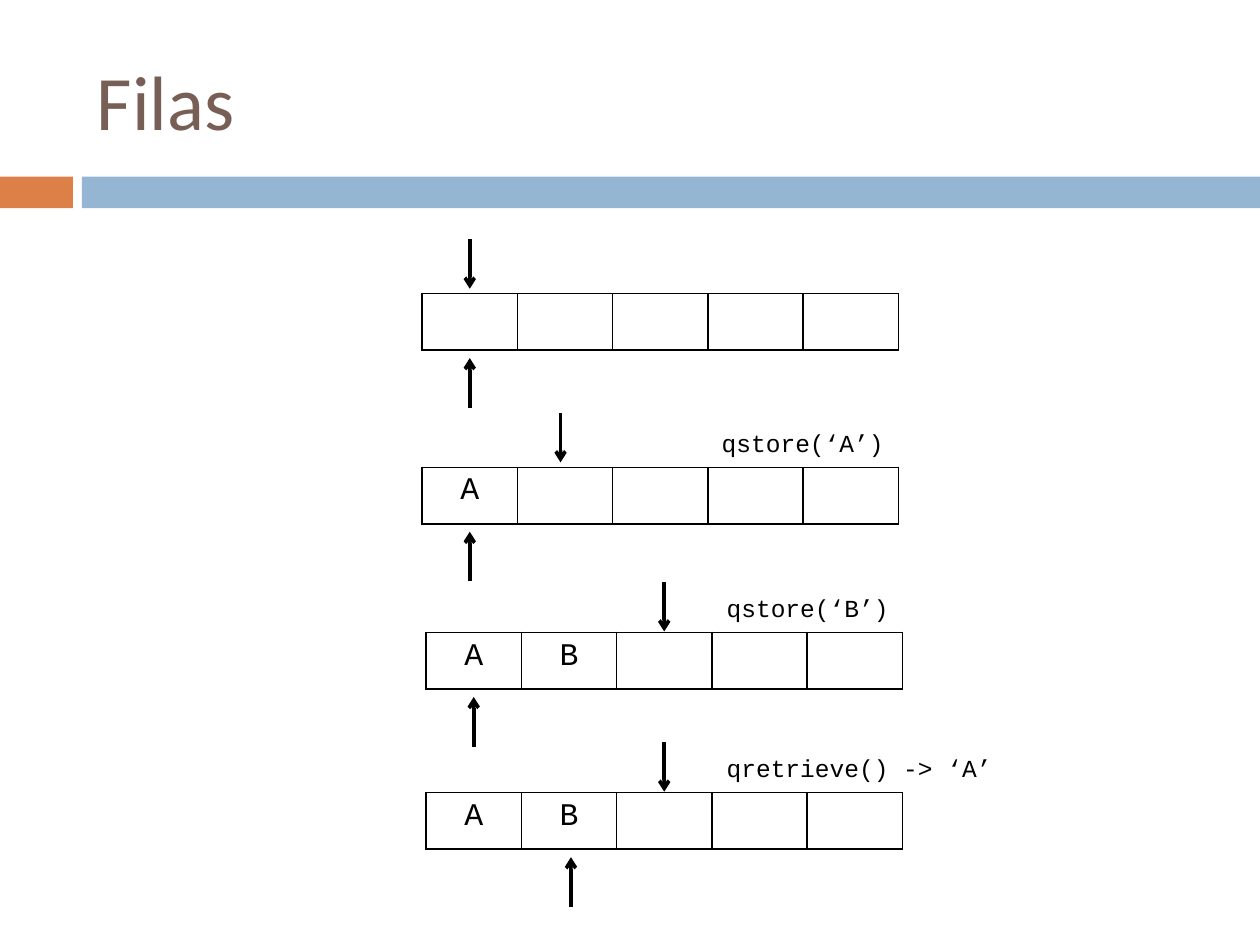
from lxml import etree
from pptx import Presentation
from pptx.dml.color import RGBColor
from pptx.enum.shapes import MSO_CONNECTOR, MSO_SHAPE
from pptx.enum.text import MSO_ANCHOR, MSO_AUTO_SIZE, PP_ALIGN
from pptx.oxml.ns import qn
from pptx.util import Cm, Pt

STRAIGHT = MSO_CONNECTOR.STRAIGHT
RECTANGLE = MSO_SHAPE.RECTANGLE
MIDDLE = MSO_ANCHOR.MIDDLE
NO_AUTOFIT = MSO_AUTO_SIZE.NONE
FIT_SHAPE = MSO_AUTO_SIZE.SHAPE_TO_FIT_TEXT
LEFT = PP_ALIGN.LEFT
CENTER = PP_ALIGN.CENTER

BLACK = "000000"
CODE_FONT = "Courier New"
SLOT_COUNT = 5
SLOT_WIDTH = 1.92
SLOT_HEIGHT = 1.14
ARROW_LENGTH = 1
RETRIEVE_OFFSET = 2.3
CALL_OFFSET = 0.92

# fields: left, top, items, store x, store gap, retrieve x, call x, call
QUEUE_STATES = [
    (8.51, 5.92, "", 9.47, 0.1, 9.47, None, ""),
    (8.51, 9.42, "A", 11.3, 0.1, 9.47, 14.3, "qstore(‘A’)"),
    (8.59, 12.75, "AB", 13.39, 0.02, 9.55, 14.4, "qstore(‘B’)"),
    (8.59, 15.98, "AB", 13.39, 0.02, 11.51, 14.4, "qretrieve() -> ‘A’"),
]


def color(value):
    return RGBColor.from_string(value)


def add_run(paragraph, text, font, size, tint, align=LEFT):
    paragraph.alignment = align
    run = paragraph.add_run()
    run.text = text
    run.font.name = font
    run.font.size = Pt(size)
    run.font.color.rgb = color(tint)


def set_title(slide, text):
    title = slide.shapes.title
    title.left, title.top = Cm(1.7), Cm(0.64)
    title.width, title.height = Cm(22.66), Cm(2.74)
    frame = title.text_frame
    frame.auto_size = NO_AUTOFIT
    frame.vertical_anchor = MIDDLE
    add_run(frame.paragraphs[0], text, "Calibri", 44, "775F55")


def add_band(slide, left, width, tint):
    band = slide.shapes.add_shape(RECTANGLE, Cm(left), Cm(3.56), Cm(width), Cm(0.64))
    band.shadow.inherit = False
    band.fill.solid()
    band.fill.fore_color.rgb = color(tint)
    band.line.fill.background()


def outline(cell):
    properties = cell._tc.get_or_add_tcPr()
    for side in ("lnL", "lnR", "lnT", "lnB"):
        border = etree.SubElement(properties, qn(f"a:{side}"), w=str(Pt(1)))
        fill = etree.SubElement(border, qn("a:solidFill"))
        etree.SubElement(fill, qn("a:srgbClr"), val=BLACK)
    cell.fill.background()


def add_queue(slide, left, top, items):
    queue = slide.shapes.add_table(
        1, SLOT_COUNT, Cm(left), Cm(top), Cm(SLOT_COUNT * SLOT_WIDTH), Cm(SLOT_HEIGHT)
    ).table
    queue.first_row = False
    queue.horz_banding = False
    for column in queue.columns:
        column.width = Cm(SLOT_WIDTH)
    for slot in queue.iter_cells():
        outline(slot)
    for index, item in enumerate(items):
        paragraph = queue.cell(0, index).text_frame.paragraphs[0]
        add_run(paragraph, item, CODE_FONT, 18, BLACK, CENTER)


def add_arrow(slide, x, start, end):
    arrow = slide.shapes.add_connector(STRAIGHT, Cm(x), Cm(start), Cm(x), Cm(end))
    arrow.line.color.rgb = color(BLACK)
    arrow.line.width = Pt(0)
    etree.SubElement(arrow.line._get_or_add_ln(), qn("a:tailEnd"), type="arrow")
    etree.SubElement(arrow._element.spPr, qn("a:effectLst"))


def add_call(slide, left, top, text):
    width = 5.9 if "->" in text else 3.81
    call = slide.shapes.add_textbox(Cm(left), Cm(top), Cm(width), Cm(0.82))
    frame = call.text_frame
    frame.word_wrap = False
    frame.auto_size = FIT_SHAPE
    add_run(frame.paragraphs[0], text, CODE_FONT, 14, BLACK)


def main():
    deck = Presentation()
    deck.slide_width, deck.slide_height = Cm(25.4), Cm(19.05)
    slide = deck.slides.add_slide(deck.slide_layouts[5])
    add_band(slide, 0, 1.47, "DD8047")
    add_band(slide, 1.65, 23.75, "94B6D2")
    set_title(slide, "Filas")
    for left, top, items, store_x, store_gap, retrieve_x, call_x, call in QUEUE_STATES:
        add_queue(slide, left, top, items)
        store_tip = top - store_gap
        add_arrow(slide, store_x, store_tip - ARROW_LENGTH, store_tip)
        retrieve_start = top + RETRIEVE_OFFSET
        add_arrow(slide, retrieve_x, retrieve_start, retrieve_start - ARROW_LENGTH)
        if call:
            add_call(slide, call_x, top - CALL_OFFSET, call)
    deck.save("out.pptx")


if __name__ == "__main__":
    main()
